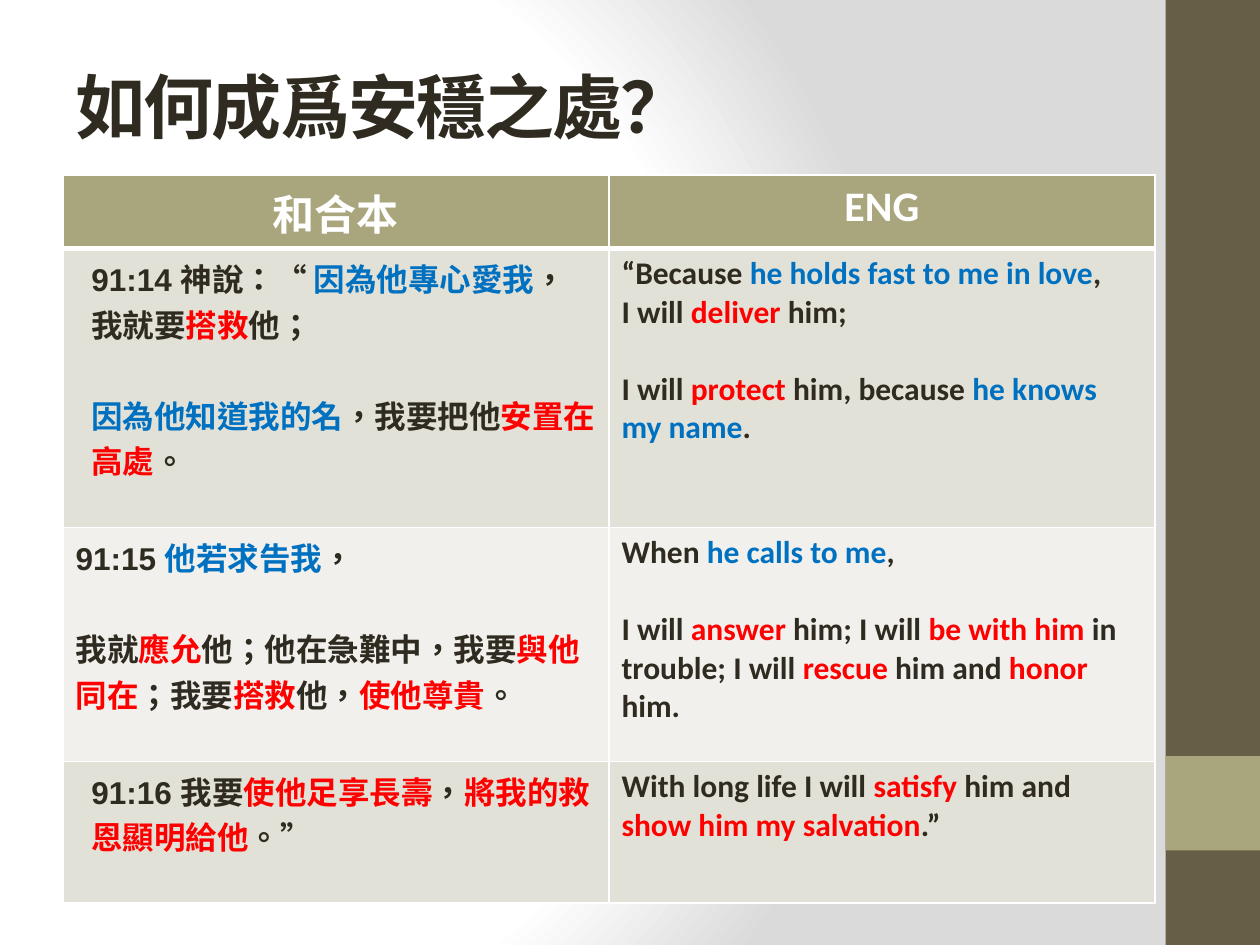
from lxml import etree
from pptx import Presentation
from pptx import util as u
from pptx.dml.color import RGBColor
from pptx.enum import shapes, text
from pptx.oxml import parse_xml
from pptx.oxml.ns import nsdecls, qn

INK, WHITE, BLUE, RED = "2F2B20", "FFFFFF", "0070C0", "FF0000"
OLIVE, BROWN = "A9A57C", "675E47"
BANDS = ["E2E1D7", "F1F0EC"]
MARKS = {"+": BLUE, "-": RED}
ROW_HEIGHTS = [41.5, 159.5, 133.5, 81]
INDENT = 9
BLANK_LINE = {"Arial": 26, "Calibri": 22}
LANGUAGES = {"Arial": "zh-TW", "Calibri": "en-US"}

HEADINGS = ["和合本", "ENG"]
VERSES = [
    (["91:14 神說：“ |+因為他專心愛我|，", "我就要|-搭救|他；",
      "~+因為他知道我的名|，我要把他|-安置在高處|。"],
     ["“Because |+he holds fast to me in love|,", "I will |-deliver| him;",
      "~I will |-protect| him, because |+he knows my name|."]),
    (["91:15 |+他若求告我|，",
      "~我就|-應允|他；他在急難中，我要|-與他同在|；我要|-搭救|他，|-使他尊貴|。"],
     ["When |+he calls to me|,",
      "~I will |-answer| him; I will |-be with him| in trouble; I will |-rescue"
      "| him and |-honor| him."]),
    (["91:16 我要|-使他足享長壽|，|-將我的救恩顯明給他|。”"],
     ["With long life I will |-satisfy| him and |-show him my salvation|.”"]),
]


def color(value):
    return RGBColor.from_string(value)


def add_text(paragraph, words, font="Calibri", size=18, ink=INK, align=None,
             spacing=None, indent=0, before=0, language=None):
    if align is not None:
        paragraph.alignment = align
    if before:
        paragraph.space_before = u.Pt(before)
    if indent:
        properties = paragraph._p.get_or_add_pPr()
        properties.set("marL", str(u.Pt(indent)))
        properties.set("indent", "0")
    for part in words.split("|"):
        run = paragraph.add_run()
        run.text = part.lstrip("+-")
        run.font.name = font
        run.font.size = u.Pt(size)
        run.font.bold = True
        run.font.color.rgb = color(MARKS.get(part[0], ink))
        if spacing is not None:
            run.font._element.set("spc", str(round(spacing * 100)))
        if language:
            run.font._element.set("lang", language)


class Deck:
    def __init__(self):
        self.presentation = Presentation()
        self.presentation.slide_width = u.Pt(720)
        self.presentation.slide_height = u.Pt(540)
        self.slide = self.presentation.slides.add_slide(
            self.presentation.slide_layouts[5])

    def background(self, stops):
        marks = "".join(
            f'<a:gs pos="{place * 1000}"><a:srgbClr val="{tone}"/></a:gs>'
            for place, tone in stops)
        self.slide._element.cSld.insert(0, parse_xml(
            f'<p:bg {nsdecls("p", "a")}><p:bgPr><a:gradFill rotWithShape="1">'
            f'<a:gsLst>{marks}</a:gsLst><a:path path="circle">'
            '<a:fillToRect l="20000" t="50000" r="100000" b="50000"/></a:path>'
            '</a:gradFill><a:effectLst/></p:bgPr></p:bg>'))

    def block(self, left, top, width, height, tone):
        block = self.slide.shapes.add_shape(
            shapes.MSO_SHAPE.RECTANGLE, *map(u.Pt, (left, top, width, height)))
        block.shadow.inherit = False
        block.fill.solid()
        block.fill.fore_color.rgb = color(tone)
        block.line.fill.background()

    def title(self, words, left, top, width, height):
        title = self.slide.shapes.title
        title.left, title.top, title.width, title.height = map(
            u.Pt, (left, top, width, height))
        frame = title.text_frame
        frame.word_wrap = True
        frame.auto_size = text.MSO_AUTO_SIZE.NONE
        frame.vertical_anchor = text.MSO_ANCHOR.MIDDLE
        add_text(frame.paragraphs[0], words, font="Cambria", size=40,
                 align=text.PP_ALIGN.LEFT, spacing=-1)

    def table(self, left, top, width, heights, columns):
        table = self.slide.shapes.add_table(
            len(heights), columns,
            *map(u.Pt, (left, top, width, sum(heights)))).table
        table.horz_banding = False
        for row, height in zip(table.rows, heights):
            row.height = u.Pt(height)
        return table

    def cell(self, cell, tone, top=1, bottom=1):
        cell.fill.solid()
        cell.fill.fore_color.rgb = color(tone)
        properties = cell._tc.get_or_add_tcPr()
        widths = {"L": 1, "R": 1, "T": top, "B": bottom}
        for place, (side, width) in enumerate(widths.items()):
            border = etree.Element(qn(f"a:ln{side}"), w=str(u.Pt(width)))
            paint = etree.SubElement(border, qn("a:solidFill"))
            etree.SubElement(paint, qn("a:srgbClr"), val=WHITE)
            properties.insert(place, border)

    def verse(self, cell, lines, font, indent):
        frame = cell.text_frame
        for number, line in enumerate(lines):
            paragraph = frame.add_paragraph() if number else frame.paragraphs[0]
            gap = BLANK_LINE[font] if line.startswith("~") else 0
            add_text(paragraph, line.lstrip("~"), font=font, indent=indent,
                     before=gap, language=LANGUAGES[font])


def main():
    deck = Deck()
    deck.background([(0, WHITE), (75, WHITE), (100, "DADADA")])
    deck.block(666, 0, 54, 540, BROWN)
    deck.block(666, 432, 54, 54, OLIVE)
    deck.title("如何成爲安穩之處？", 36, 32, 600, 57)

    verses = deck.table(36, 100, 624, ROW_HEIGHTS, len(HEADINGS))
    for column, heading in enumerate(HEADINGS):
        cell = verses.cell(0, column)
        deck.cell(cell, OLIVE, bottom=3)
        add_text(cell.text_frame.paragraphs[0], heading, size=24, ink=WHITE,
                 align=text.PP_ALIGN.CENTER)
    for row, translations in enumerate(VERSES, 1):
        for column, (lines, font) in enumerate(zip(translations, LANGUAGES)):
            cell = verses.cell(row, column)
            deck.cell(cell, BANDS[(row - 1) % 2], top=3 if row == 1 else 1)
            indented = column == 0 and row % 2 == 1
            deck.verse(cell, lines, font, INDENT if indented else 0)

    deck.presentation.save("out.pptx")


if __name__ == "__main__":
    main()
